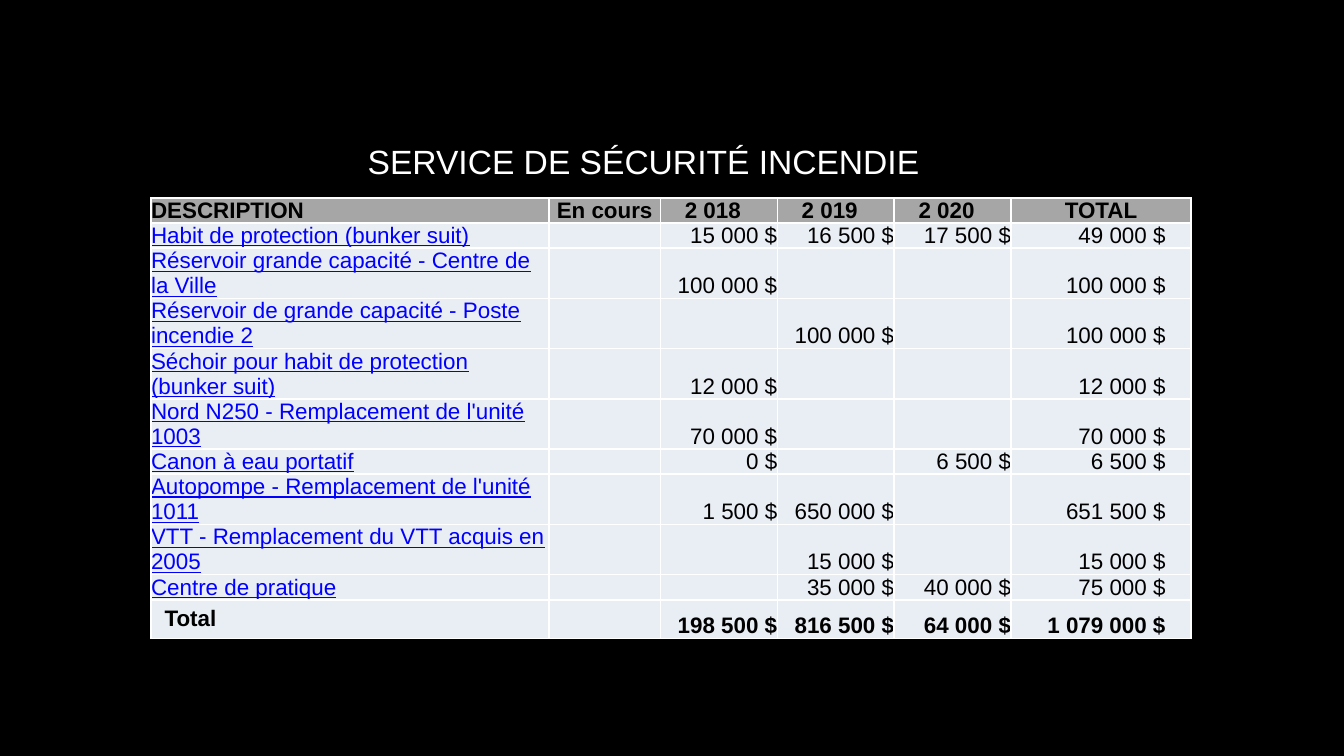
import pptx
import pptx.util
import pptx.dml.color
import pptx.enum.text
import lxml.etree

ALIGN = pptx.enum.text.PP_ALIGN
ANCHOR = pptx.enum.text.MSO_ANCHOR
DRAWING = "{http://schemas.openxmlformats.org/drawingml/2006/main}"

BLACK, WHITE, LINK_BLUE = "000000", "FFFFFF", "0000FF"
HEADER_GREY, ROW_TINT = "A6A6A6", "E9EDF4"


def color(value):
    return pptx.dml.color.RGBColor.from_string(value)


def dollars(amount):
    return "" if amount is None else f"{amount:,} $".replace(",", " ")


class SlideBuilder:
    """Holds the style and the slide; lengths are hundredths of the slide width."""

    font, body_size, title_size = "Arial", 12, 18

    def __init__(self, deck, background):
        self.unit = deck.slide_width / 100
        self.slide = deck.slides.add_slide(deck.slide_layouts[6])
        fill = self.slide.background.fill
        fill.solid()
        fill.fore_color.rgb = color(background)

    def length(self, steps):
        return pptx.util.Emu(round(steps * self.unit))

    def run(self, para, text, size, ink, bold=False, underline=False):
        span = para.add_run()
        span.text = text
        span.font.name = self.font
        span.font.size = pptx.util.Pt(size)
        span.font.color.rgb = color(ink)
        span.font.bold = bold
        span.font.underline = underline

    def title(self, text, left, top, width, height):
        box = self.slide.shapes.add_textbox(*map(self.length, (left, top, width, height)))
        box.text_frame.word_wrap = False
        box.text_frame.auto_size = pptx.enum.text.MSO_AUTO_SIZE.SHAPE_TO_FIT_TEXT
        self.run(box.text_frame.paragraphs[0], text, self.title_size, WHITE)

    def table(self, left, top, columns, rows):
        frame = self.slide.shapes.add_table(
            len(rows), len(columns),
            *map(self.length, (left, top, sum(columns), sum(rows))))
        table = frame.table
        for column, width in zip(table.columns, columns):
            column.width = self.length(width)
        for row, height in zip(table.rows, rows):
            row.height = self.length(height)
        return table

    def cell(self, cell, text, fill, align=ALIGN.LEFT, anchor=ANCHOR.BOTTOM,
             insets=(0, 0, 0, 0), ink=BLACK, bold=False, underline=False):
        cell.margin_left, cell.margin_top, cell.margin_right, cell.margin_bottom = map(
            self.length, insets)
        cell.vertical_anchor = anchor
        cell.fill.solid()
        cell.fill.fore_color.rgb = color(fill)
        self.borders(cell)
        para = cell.text_frame.paragraphs[0]
        para.alignment = align
        if text:
            self.run(para, text, self.body_size, ink, bold, underline)
        else:
            # An empty cell needs the body font too, or it stretches its row
            end = lxml.etree.SubElement(
                para._p, DRAWING + "endParaRPr", sz=str(self.body_size * 100))
            lxml.etree.SubElement(end, DRAWING + "latin", typeface=self.font)

    def borders(self, cell):
        properties = cell._tc.get_or_add_tcPr()
        for index, side in enumerate(("lnL", "lnR", "lnT", "lnB")):
            line = lxml.etree.Element(DRAWING + side, w=str(pptx.util.Pt(1)))
            fill = lxml.etree.SubElement(line, DRAWING + "solidFill")
            lxml.etree.SubElement(fill, DRAWING + "srgbClr", val=WHITE)
            properties.insert(index, line)


HEADERS = ["DESCRIPTION", "En cours", "2 018", "2 019", "2 020", "TOTAL"]

# Description, amounts for the three years, lines of text in the row
PROJECTS = [
    ("Habit de protection (bunker suit)", (15000, 16500, 17500), 1),
    ("Réservoir grande capacité - Centre de la Ville", (100000, None, None), 2),
    ("Réservoir de grande capacité - Poste incendie 2", (None, 100000, None), 2),
    ("Séchoir pour habit de protection (bunker suit)", (12000, None, None), 2),
    ("Nord N250 - Remplacement de l'unité 1003", (70000, None, None), 2),
    ("Canon à eau portatif", (0, None, 6500), 1),
    ("Autopompe - Remplacement de l'unité 1011", (1500, 650000, None), 2),
    ("VTT - Remplacement du VTT acquis en 2005", (None, 15000, None), 2),
    ("Centre de pratique", (None, 35000, 40000), 1),
]


def main():
    # Widescreen page, 16:9
    deck = pptx.Presentation()
    deck.slide_width = pptx.util.Inches(10)
    deck.slide_height = pptx.util.Inches(10 * 9 / 16)
    page = SlideBuilder(deck, BLACK)

    # Table grid: rows follow their number of text lines
    line = 1.87
    heights = [line] + [line * count for _, _, count in PROJECTS] + [2.87]
    table = page.table(11.24, 14.73, [29.6, 8.3, 8.7, 8.7, 8.7, 13.4], heights)

    # Header: the years sit slightly left of centre
    for column, text in enumerate(HEADERS):
        page.cell(table.cell(0, column), text, HEADER_GREY, bold=True,
                  align=ALIGN.CENTER if column else ALIGN.LEFT,
                  insets=(0, 0, 0.9 if 2 <= column <= 4 else 0, 0))

    def amounts(row, years, bold=False):
        values = [None, *years, sum(value or 0 for value in years)]
        for column, value in enumerate(values, start=1):
            page.cell(table.cell(row, column), dollars(value), ROW_TINT, bold=bold,
                      align=ALIGN.RIGHT, insets=(0, 0, 1.9 if column == 5 else 0, 0))

    # Projects
    for row, (description, years, _) in enumerate(PROJECTS, start=1):
        page.cell(table.cell(row, 0), description, ROW_TINT, ink=LINK_BLUE, underline=True)
        amounts(row, years)

    # Total row
    last = len(PROJECTS) + 1
    page.cell(table.cell(last, 0), "Total", ROW_TINT, bold=True,
              anchor=ANCHOR.TOP, insets=(1, 0.5, 1, 0.5))
    yearly = zip(*(years for _, years, _ in PROJECTS))
    amounts(last, [sum(value or 0 for value in year) for year in yearly], bold=True)

    # Title
    page.title("SERVICE DE SÉCURITÉ INCENDIE", 26.37, 10, 43.5, 4)

    deck.save("out.pptx")


if __name__ == "__main__":
    main()
